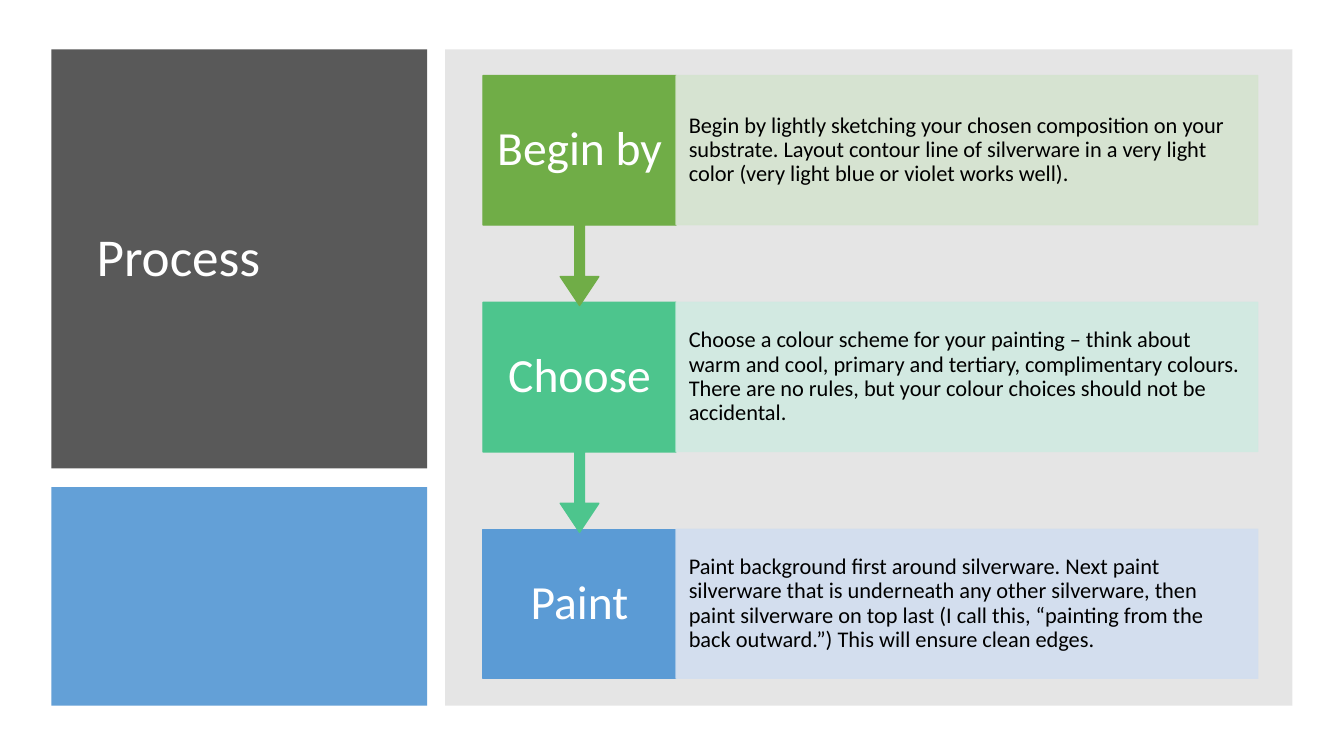
import pptx
import pptx.util
import lxml.etree
from pptx.dml.color import RGBColor
from pptx.enum.shapes import MSO_SHAPE
from pptx.enum.text import MSO_ANCHOR, PP_ALIGN
from pptx.oxml.ns import qn

PX = 9525
FONT = "Calibri"
WHITE = RGBColor(0xFF, 0xFF, 0xFF)
BLACK = RGBColor(0x00, 0x00, 0x00)
CHARCOAL = RGBColor(0x59, 0x59, 0x59)
GRAY = RGBColor(0x80, 0x80, 0x80)
BLUE = RGBColor(0x5B, 0x9B, 0xD5)
TEAL = RGBColor(0x4D, 0xC5, 0x8D)
GREEN = RGBColor(0x70, 0xAD, 0x47)
PALE_BLUE = RGBColor(0xD2, 0xDE, 0xEF)
PALE_TEAL = RGBColor(0xD0, 0xEA, 0xE1)
PALE_GREEN = RGBColor(0xD5, 0xE3, 0xCF)

STEPS = [
    ("Begin by", GREEN, PALE_GREEN,
     "Begin by lightly sketching your chosen composition on your substrate. "
     "Layout contour line of silverware in a very light color "
     "(very light blue or violet works well)."),
    ("Choose", TEAL, PALE_TEAL,
     "Choose a colour scheme for your painting – think about warm and cool, "
     "primary and tertiary, complimentary colours. There are no rules, "
     "but your colour choices should not be accidental."),
    ("Paint", BLUE, PALE_BLUE,
     "Paint background first around silverware. Next paint silverware that is "
     "underneath any other silverware, then paint silverware on top last "
     "(I call this, “painting from the back outward.”) "
     "This will ensure clean edges."),
]


def add_block(s, kind, box, color, alpha=100, outlined=False):
    sp = s.shapes.add_shape(kind, *(v * PX for v in box))
    sp.shadow.inherit = False
    sp.fill.solid()
    sp.fill.fore_color.rgb = color
    if outlined:
        sp.line.color.rgb = color
        sp.line.width = pptx.util.Pt(1)
    else:
        sp.line.fill.background()
    if alpha < 100:
        for clr in sp._element.spPr.iter(qn("a:srgbClr")):
            lxml.etree.SubElement(clr, qn("a:alpha"), val=str(alpha * 1000))
    return sp


def set_text(sp, text, size, color, align, inset_x, inset_y):
    tf = sp.text_frame
    tf.word_wrap = True
    tf.vertical_anchor = MSO_ANCHOR.MIDDLE
    tf.margin_left = tf.margin_right = inset_x * PX
    tf.margin_top = tf.margin_bottom = inset_y * PX
    p = tf.paragraphs[0]
    p.text = text
    p.alignment = align
    p.line_spacing = 0.9
    p.font.name = FONT
    p.font.size = pptx.util.Pt(size)
    p.font.color.rgb = color


def add_title_column(s, x, y, w, h):
    title_h, gap = 399, 18
    sp = add_block(s, MSO_SHAPE.RECTANGLE, (x, y, w, title_h), CHARCOAL)
    set_text(sp, "Process", 38, WHITE, PP_ALIGN.LEFT, 43, 40)
    top = title_h + gap
    add_block(s, MSO_SHAPE.RECTANGLE, (x, y + top, w, h - top), BLUE, 95)


def add_step(s, x, y, w, h, step, arrow_h):
    name, color, pale, text = step
    name_w = 184
    kind = MSO_SHAPE.DOWN_ARROW_CALLOUT if arrow_h else MSO_SHAPE.RECTANGLE
    sp = add_block(s, kind, (x, y, name_w, h + arrow_h), color, outlined=True)
    if arrow_h:
        for i, value in enumerate((0.05, 0.1, 0.15, 0.65)):
            sp.adjustments[i] = value
    set_text(sp, name, 34, WHITE, PP_ALIGN.CENTER, 13, 25)
    box = (x + name_w, y, w - name_w, h)
    sp = add_block(s, MSO_SHAPE.RECTANGLE, box, pale, 90, True)
    set_text(sp, text, 16, BLACK, PP_ALIGN.LEFT, 12, 21)


def add_process(s, x, y, w, h):
    add_block(s, MSO_SHAPE.RECTANGLE, (x, y, w, h), GRAY, 20)
    step_h, pitch, arrow_h = 142, 216, 77
    last = len(STEPS) - 1
    for i in range(last, -1, -1):
        add_step(s, x + 36, y + 25 + i * pitch, 738, step_h, STEPS[i],
                 arrow_h if i < last else 0)


def main():
    prs = pptx.Presentation()
    prs.slide_width, prs.slide_height = 1280 * PX, 720 * PX
    s = prs.slides.add_slide(prs.slide_layouts[6])
    add_title_column(s, 49, 47, 358, 625)
    add_process(s, 424, 47, 807, 625)
    prs.save("out.pptx")


if __name__ == "__main__":
    main()
